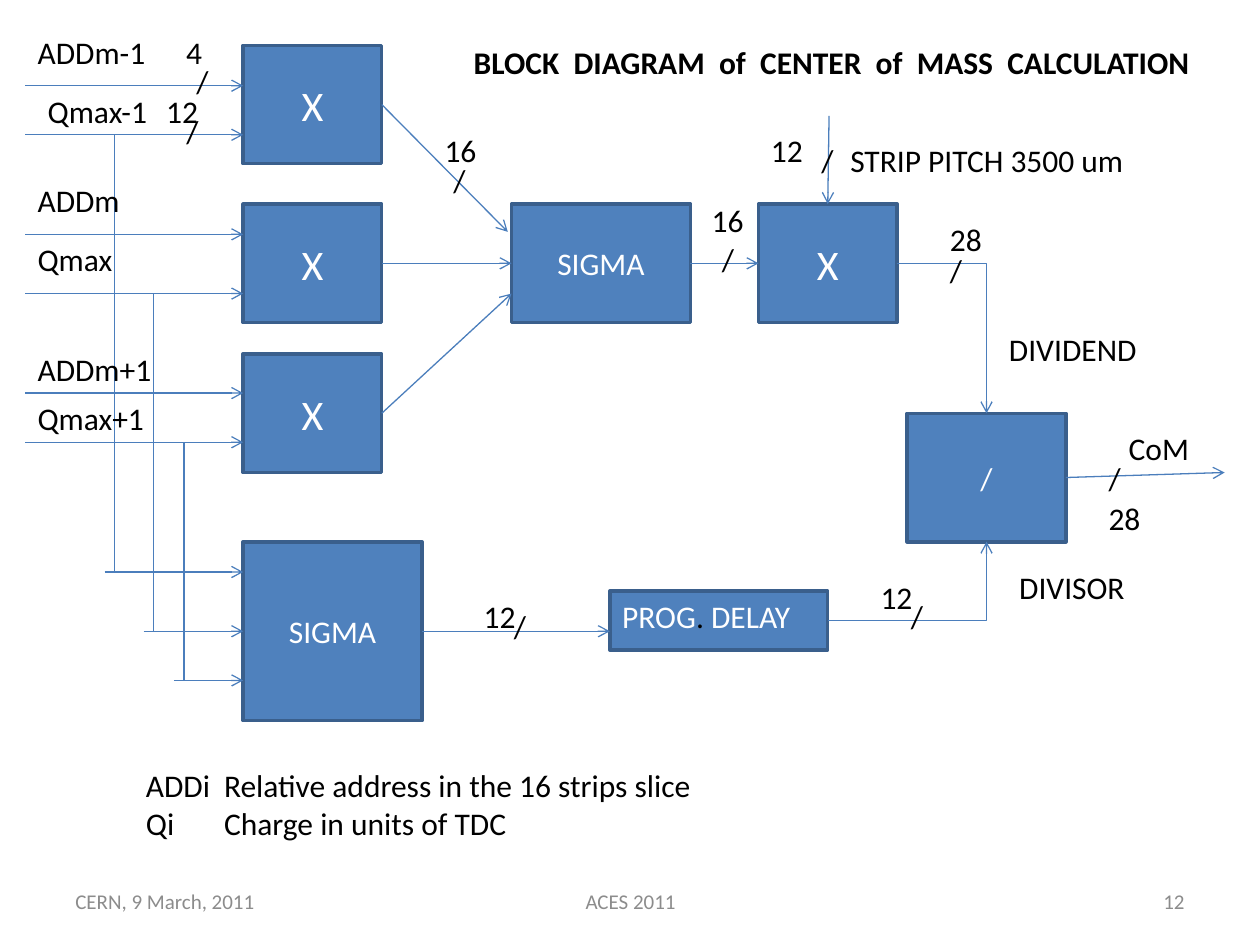
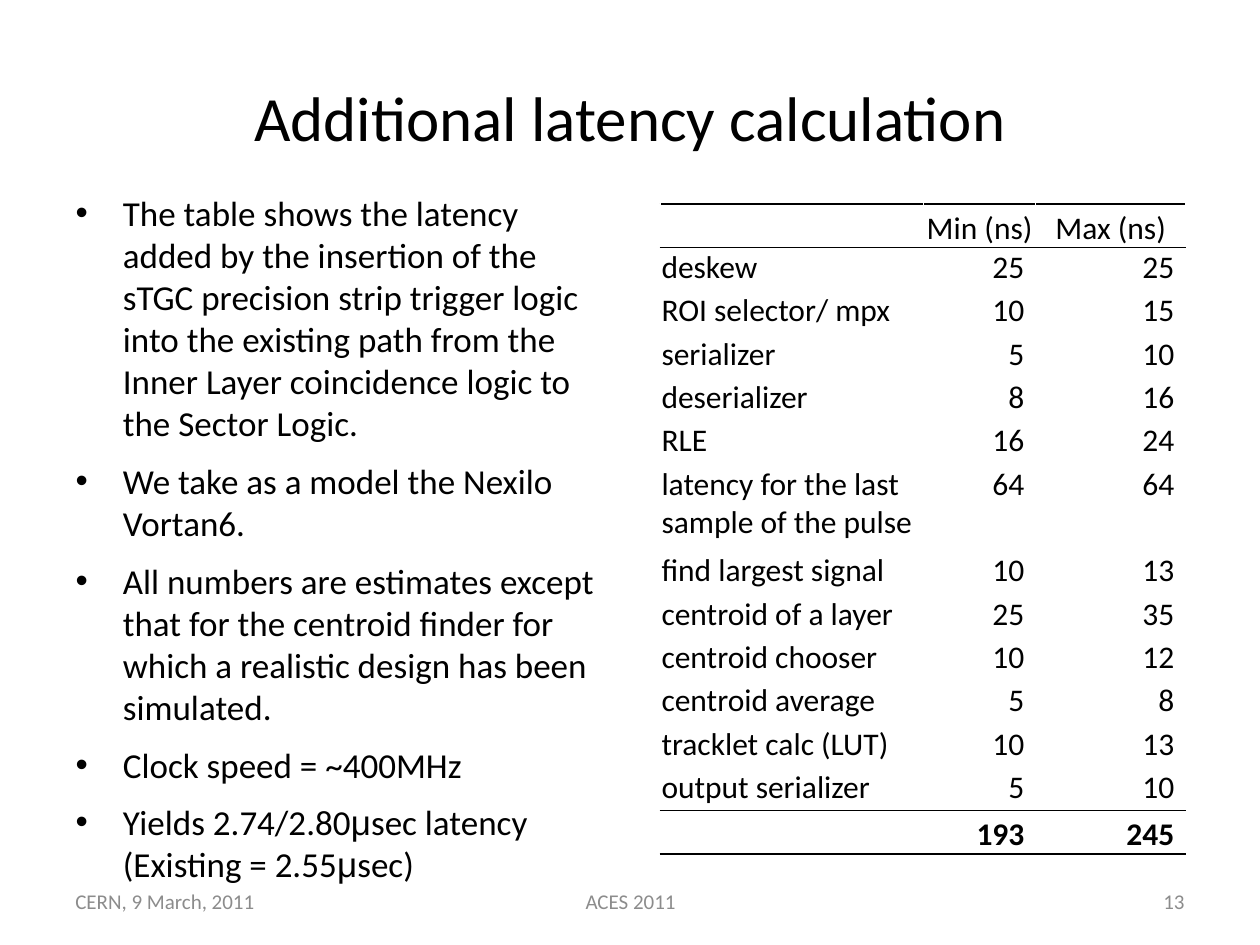
from lxml import etree
from pptx import Presentation
from pptx import util as u
from pptx.dml.color import RGBColor
from pptx.enum import shapes, text
from pptx.oxml.ns import qn

COLORS = {"block": "4F81BD", "edge": "3A5F8C", "wire": "4B7EBC",
          "ink": "000000", "light": "FFFFFF", "footer": "8C8C8C"}
FONT, SYMBOL_FONT = "Calibri", "Arial"
COLS, ROWS = 100, 75
TOP, LEFT, BOTTOM, RIGHT = range(4)
ALIGN, ANCHOR = text.PP_ALIGN, text.MSO_ANCHOR
TITLE_ONLY, TITLE_AND_BODY = 5, 1


def rgb(name):
    return RGBColor.from_string(COLORS[name])


class Deck:
    """Holds the shared style and the current slide; places are grid columns and rows."""

    def __init__(self):
        self.prs = Presentation()
        self.prs.slide_width, self.prs.slide_height = u.Inches(10), u.Inches(7.5)

    def x(self, col):
        return round(self.prs.slide_width * col / COLS)

    def y(self, row):
        return round(self.prs.slide_height * row / ROWS)

    def area(self, col, row, width, height):
        return self.x(col), self.y(row), self.x(width), self.y(height)

    def place(self, sp, *area):
        sp.left, sp.top, sp.width, sp.height = self.area(*area)

    def style(self, r, size=18, color="ink", font=FONT, bold=False):
        r.font.size, r.font.name, r.font.bold = u.Pt(size), font, bold
        r.font.color.rgb = rgb(color)

    def set_text(self, tf, content, align=ALIGN.LEFT, anchor=ANCHOR.TOP, **style):
        tf.text = content
        tf.word_wrap, tf.vertical_anchor = True, anchor
        tf.auto_size = text.MSO_AUTO_SIZE.NONE
        for p in tf.paragraphs:
            p.alignment = align
            for r in p.runs:
                self.style(r, **style)

    def runs(self, p, pieces, **base):
        """Fill a paragraph from (text, style changes) pairs; a newline is a line break."""
        for content, changes in pieces:
            if content == "\n":
                p.add_line_break()
            else:
                r = p.add_run()
                r.text = content
                self.style(r, **{**base, **changes})

    def slide(self, layout, number):
        self.s = self.prs.slides.add_slide(self.prs.slide_layouts[layout])
        for content, col, width, align in (("CERN, 9 March, 2011", 5, 23.3, ALIGN.LEFT),
                                           ("ACES 2011", 34.2, 31.7, ALIGN.CENTER),
                                           (str(number), 71.7, 23.3, ALIGN.RIGHT)):
            self.label(content, col, 69.5, width, align=align, anchor=ANCHOR.MIDDLE,
                       size=12, color="footer")

    def title(self, content, area, **style):
        sp = self.s.shapes.title
        self.place(sp, *area)
        self.set_text(sp.text_frame, content, **style)

    def bullets(self, items, area):
        sp = self.s.placeholders[1]
        self.place(sp, *area)
        tf = sp.text_frame
        tf.auto_size = text.MSO_AUTO_SIZE.NONE
        for i, pieces in enumerate(items):
            p = tf.add_paragraph() if i else tf.paragraphs[0]
            p.space_before = u.Pt(9)
            self.runs(p, pieces, size=20)

    def label(self, content, col, row, width, height=4, **style):
        sp = self.s.shapes.add_textbox(*self.area(col, row, width, height))
        self.set_text(sp.text_frame, content, **style)
        return sp

    def block(self, content, col, row, width, height, size=18):
        sp = self.s.shapes.add_shape(shapes.MSO_SHAPE.RECTANGLE,
                                     *self.area(col, row, width, height))
        sp.shadow.inherit = False
        sp.fill.solid()
        sp.fill.fore_color.rgb = rgb("block")
        sp.line.color.rgb, sp.line.width = rgb("edge"), u.Pt(2)
        self.set_text(sp.text_frame, content, ALIGN.CENTER, ANCHOR.MIDDLE,
                      size=size, color="light")
        return sp

    def wire(self, start, end, arrow=True, bent=False):
        """Join two ends, each a (column, row) point or a (block, side) pair."""
        def point(place):
            free = isinstance(place[0], (int, float))
            return (self.x(place[0]), self.y(place[1])) if free else (0, 0)

        kind = shapes.MSO_CONNECTOR.ELBOW if bent else shapes.MSO_CONNECTOR.STRAIGHT
        c = self.s.shapes.add_connector(kind, *point(start), *point(end))
        for place, connect in ((start, c.begin_connect), (end, c.end_connect)):
            if not isinstance(place[0], (int, float)):
                connect(*place)
        c.line.color.rgb, c.line.width = rgb("wire"), u.Pt(0.75)
        props = c.element.spPr
        if bent:
            props.find(qn("a:prstGeom")).set("prst", "bentConnector2")
        if arrow:
            etree.SubElement(props.find(qn("a:ln")), qn("a:tailEnd"), type="arrow")
        etree.SubElement(props, qn("a:effectLst"))

    def borders(self, cell, **widths):
        """Rule a cell's top (T) and bottom (B) with lines given in points."""
        tc_pr = cell._tc.get_or_add_tcPr()
        for i, (side, width) in enumerate(widths.items()):
            ln = etree.Element(qn(f"a:ln{side}"), w=str(u.Pt(width)))
            fill = etree.SubElement(ln, qn("a:solidFill"))
            etree.SubElement(fill, qn("a:srgbClr"), val=COLORS["ink"])
            tc_pr.insert(i, ln)

    def table(self, rows, area, widths, heights, rules):
        """Draw a table; rules maps a row index to its ruled sides."""
        frame = self.s.shapes.add_table(len(rows), len(widths), *self.area(*area))
        tbl = frame.table
        tbl.first_row = tbl.horz_banding = False
        for column, width in zip(tbl.columns, widths):
            column.width = self.x(width)
        last = len(rows) - 1
        for i, values in enumerate(rows):
            tbl.rows[i].height = self.y(heights[i])
            for j, value in enumerate(values):
                cell = tbl.cell(i, j)
                number = j > 0 and i > 0
                cell.margin_left = cell.margin_top = u.Inches(0.01)
                cell.margin_right = u.Inches(0.09 if number else 0.01)
                cell.margin_bottom = 0
                cell.vertical_anchor = ANCHOR.BOTTOM if i in (0, last) else ANCHOR.TOP
                cell.fill.background()
                self.borders(cell, **rules.get(i, {}))
                cell.text = str(value)
                p = cell.text_frame.paragraphs[0]
                p.alignment = (ALIGN.RIGHT if number else
                               ALIGN.LEFT if i else ALIGN.CENTER)
                for r in p.runs:
                    self.style(r, bold=i == last)


def block_diagram(d):
    d.slide(TITLE_ONLY, 12)
    d.title("BLOCK  DIAGRAM  of  CENTER  of  MASS  CALCULATION",
            (36.6, 2.9, 59.6, 4), bold=True)

    products = [d.block("X", 19.3, row, 11, 9.4, size=24) for row in (3.6, 16.2, 28.1)]
    moment_sum = d.block("SIGMA", 40.6, 16.2, 14.2, 9.4)
    pitch_product = d.block("X", 60.2, 16.2, 11, 9.4, size=24)
    charge_sum = d.block("SIGMA", 19.3, 43, 14.2, 14.2)
    divider = d.block("/", 72, 32.8, 12.6, 10.2)
    delay = d.block("", 48.4, 46.9, 17.3, 4.7)
    tf = delay.text_frame
    tf.vertical_anchor = ANCHOR.TOP
    tf.paragraphs[0].alignment = ALIGN.LEFT
    d.runs(tf.paragraphs[0], [("PROG", {}), (". ", {"color": "ink"}), ("DELAY", {})],
           color="light")

    charge_rows, tap_cols, sum_rows = (10.7, 23.3, 35.1), (9.1, 12.2, 14.6), (45.4, 50.1, 54)
    for row in (6.8, 18.6, 31.2) + charge_rows:
        d.wire((2, row), (19.3, row))
    for charge_row, tap, sum_row in zip(charge_rows, tap_cols, sum_rows):
        middle = sum_row == sum_rows[1]
        d.wire((tap, sum_row), (tap, charge_row), arrow=False)
        d.wire((tap - 0.8, sum_row), (charge_sum, LEFT) if middle else (19.3, sum_row))

    for product, target in zip(products, ((40.3, 18.4), (moment_sum, LEFT), (40.6, 23.3))):
        d.wire((product, RIGHT), target)
    d.wire((moment_sum, RIGHT), (pitch_product, LEFT))
    d.wire((65.8, 9.2), (pitch_product, TOP))
    d.wire((pitch_product, RIGHT), (divider, TOP), bent=True)
    d.wire((delay, RIGHT), (divider, BOTTOM), bent=True)
    d.wire((charge_sum, RIGHT), (48.4, 50.1))
    d.wire((divider, RIGHT), (97.2, 37.5))

    for label in (("ADDm-1", 2, 2.1, 11.8), ("Qmax-1", 2.8, 6.8, 10.5),
                  ("ADDm", 2, 13.9, 9), ("Qmax", 2, 18.6, 8.4),
                  ("ADDm+1", 2, 27.3, 11.6), ("Qmax+1", 2, 31.2, 11),
                  ("STRIP PITCH 3500 um", 66.5, 10.7, 24.4), ("CoM", 88.6, 33.6, 6.9),
                  ("DIVIDEND", 79.1, 25.7, 12.7), ("DIVISOR", 79.9, 44.6, 10.8)):
        d.label(*label)
    for bits, col, row in ((4, 13.8, 2.1), (12, 12.2, 6.8), (16, 34.3, 9.9),
                           (16, 55.5, 15.5), (12, 60.2, 9.9), (28, 74.4, 17),
                           (12, 37.4, 46.9), (12, 68.9, 45.4), (28, 87, 39.1)):
        d.label(str(bits), col, row, 5)
    for col, row in ((14.6, 4.4), (13.8, 8.4), (35, 12.3), (56.3, 18.6), (64.2, 10.7),
                     (74.4, 19.4), (39.8, 47.7), (71.3, 46.9), (87, 35.9)):
        d.label("/", col, row, 3.2)

    legend = d.label("ADDi\tRelative address in the 16 strips slice\n"
                     "Qi\tCharge in units of TDC", 10.6, 60.3, 52, 7.1)
    for p in legend.text_frame.paragraphs:
        tabs = etree.SubElement(p._p.get_or_add_pPr(), qn("a:tabLst"))
        etree.SubElement(tabs, qn("a:tab"), pos=str(u.Inches(0.62)), algn="l")


def latency(d):
    d.slide(TITLE_AND_BODY, 13)
    d.title("Additional latency calculation", (5, 3, 90, 12.5),
            align=ALIGN.CENTER, anchor=ANCHOR.MIDDLE, size=36)
    micro = ("μ", {"font": SYMBOL_FONT})
    plain = ("The table shows the latency added by the insertion of the sTGC precision strip "
             "trigger logic into the existing path from the Inner Layer coincidence logic to "
             "the Sector Logic.",
             "We take as a model the Nexilo Vortan6.",
             "All numbers are estimates except that for the centroid finder for which a "
             "realistic design has been simulated.",
             "Clock speed = ~400MHz")
    result = [("Yields 2.74/2.80", {}), micro, ("sec latency", {}), ("\n", {}),
              ("(Existing = 2.55", {}), micro, ("sec)", {})]
    d.bullets([[(item, {})] for item in plain] + [result], (5, 14.7, 44.2, 52.3))

    rows = [("", "Min (ns)", "Max (ns)"),
            ("deskew", 25, 25),
            ("ROI selector/ mpx", 10, 15),
            ("serializer", 5, 10),
            ("deserializer", 8, 16),
            ("RLE", 16, 24),
            ("latency for the last sample of the pulse", 64, 64),
            ("find largest signal", 10, 13),
            ("centroid of a layer", 25, 35),
            ("centroid chooser", 10, 12),
            ("centroid average", 5, 8),
            ("tracklet calc (LUT)", 10, 13),
            ("output serializer", 5, 10),
            ("", 193, 245)]
    heights = [6.88 if len(name) > 30 else 3.44 for name, *_ in rows]
    d.table(rows, (52.4, 16.2, 41.7, 51.6), (20.9, 8.9, 11.9), heights,
            {0: {"T": 1, "B": 0.5}, 1: {"T": 0.5},
             len(rows) - 2: {"B": 1}, len(rows) - 1: {"T": 1, "B": 1}})


def main():
    d = Deck()
    block_diagram(d)
    latency(d)
    d.prs.save("out.pptx")


if __name__ == "__main__":
    main()
